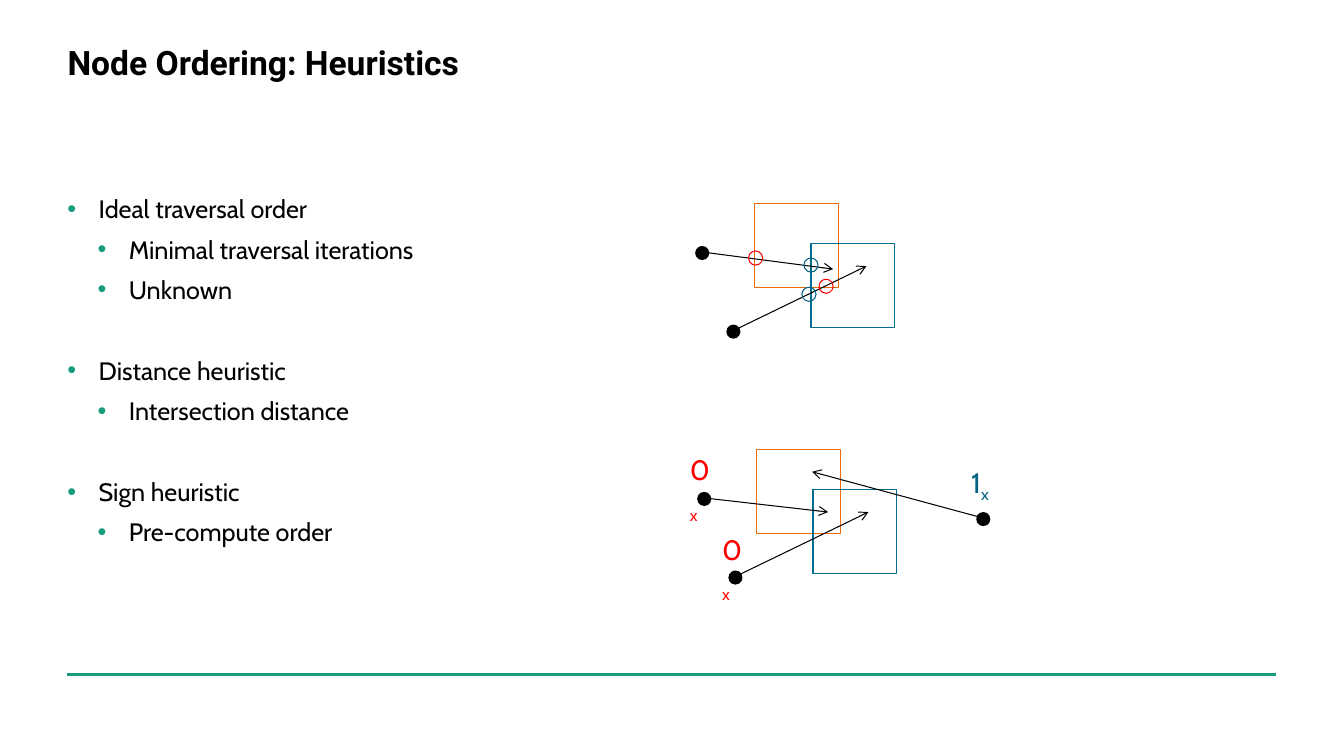
from dataclasses import dataclass

from lxml import etree
from pptx import Presentation
from pptx.dml.color import RGBColor
from pptx.enum.shapes import MSO_CONNECTOR, MSO_SHAPE
from pptx.oxml.ns import qn
from pptx.util import Inches, Pt

STRAIGHT = MSO_CONNECTOR.STRAIGHT
RECTANGLE = MSO_SHAPE.RECTANGLE
OVAL = MSO_SHAPE.OVAL


@dataclass(frozen=True)
class Theme:
    """Fonts, colours and type sizes of the slide."""
    heading_font: str = "Roboto"
    body_font: str = "Cabin"
    black: str = "000000"
    green: str = "179C7D"
    orange: str = "EB6A0A"
    blue: str = "006E92"
    dark_blue: str = "006384"
    red: str = "FF0000"
    title_size: float = 24
    body_size: float = 18
    label_size: float = 20
    thin: float = 0.75
    thick: float = 2.5


class SlideBuilder:
    """Draws styled elements on the current slide."""

    def __init__(self, slide, theme):
        self.slide = slide
        self.theme = theme

    def text_frame(self, left, top, width, height, margin=0.0):
        """Add an empty wrapping text box and return its frame."""
        box = self.slide.shapes.add_textbox(
            Inches(left), Inches(top), Inches(width), Inches(height))
        frame = box.text_frame
        frame.word_wrap = True
        frame.margin_left = frame.margin_right = Inches(margin)
        frame.margin_top = frame.margin_bottom = Inches(margin / 2)
        return frame

    def style(self, font, name, size, color, bold=False):
        """Apply typeface, size, colour and weight to a font."""
        font.name = name
        font.size = Pt(size)
        font.bold = bold
        font.color.rgb = RGBColor.from_string(color)

    def title(self, text):
        """Add the slide heading."""
        frame = self.text_frame(0.67, 0.42, 11.99, 0.4)
        frame.text = text
        self.style(frame.paragraphs[0].runs[0].font, self.theme.heading_font,
                   self.theme.title_size, self.theme.black, bold=True)

    def bullets(self, topics):
        """Add topics with their indented points in one text box."""
        frame = self.text_frame(0.67, 1.92, 5.8, 3.7)
        para = frame.paragraphs[0]
        for number, (topic, points) in enumerate(topics):
            for position, text in enumerate([topic, *points]):
                if number or position:
                    para = frame.add_paragraph()
                level = 1 if position else 0
                self.bullet(para, text, level)
                if number and not level:
                    para.space_before = Pt(29)

    def bullet(self, para, text, level):
        """Format one bulleted paragraph."""
        para.text = text
        para.level = level
        properties = para._p.get_or_add_pPr()
        properties.set("marL", str(Inches(0.31 + 0.3 * level)))
        properties.set("indent", str(Inches(-0.31)))
        color = etree.SubElement(properties, qn("a:buClr"))
        etree.SubElement(color, qn("a:srgbClr"), val=self.theme.green)
        etree.SubElement(properties, qn("a:buFont"), typeface="Arial")
        etree.SubElement(properties, qn("a:buChar"), char="•")
        para.space_after = Pt(7.2)
        self.style(para.runs[0].font, self.theme.body_font,
                   self.theme.body_size, self.theme.black)

    def shape(self, kind, left, top, size, line=None, fill=None):
        """Add a shape of equal sides, outlined or filled."""
        shape = self.slide.shapes.add_shape(
            kind, Inches(left), Inches(top), Inches(size), Inches(size))
        shape.shadow.inherit = False
        if fill:
            shape.fill.solid()
            shape.fill.fore_color.rgb = RGBColor.from_string(fill)
        else:
            shape.fill.background()
        if line:
            shape.line.color.rgb = RGBColor.from_string(line)
            shape.line.width = Pt(self.theme.thin)
        else:
            shape.line.fill.background()

    def line(self, start, end, color, width, arrow=False):
        """Add a straight line, with an arrowhead if asked."""
        points = [Inches(value) for value in (*start, *end)]
        line = self.slide.shapes.add_connector(STRAIGHT, *points)
        line.line.color.rgb = RGBColor.from_string(color)
        line.line.width = Pt(width)
        if arrow:
            etree.SubElement(line.line._get_or_add_ln(), qn("a:tailEnd"), type="arrow")
        etree.SubElement(line._element.spPr, qn("a:effectLst"))

    def ray(self, left, top, end):
        """Add an origin dot and the arrow leaving it."""
        self.shape(OVAL, left, top, 0.14, fill=self.theme.black)
        self.line((left + 0.07, top + 0.06), end, self.theme.black,
                  self.theme.thin, arrow=True)

    def scene(self, left, top, upper_end):
        """Add two overlapping squares and the two rays from the left."""
        self.shape(RECTANGLE, left, top, 0.83, line=self.theme.orange)
        self.shape(RECTANGLE, left + 0.56, top + 0.4, 0.83, line=self.theme.blue)
        self.ray(left - 0.28, top + 1.2, (left + 1.11, top + 0.62))
        self.ray(left - 0.59, top + 0.42, upper_end)

    def sign(self, digit, left, top, color):
        """Add a sign bit with its axis as subscript."""
        para = self.text_frame(left, top, 0.45, 0.44, margin=0.1).paragraphs[0]
        for text in (digit, "x"):
            span = para.add_run()
            span.text = text
            self.style(span.font, self.theme.body_font, self.theme.label_size, color)
        span._r.get_or_add_rPr().set("baseline", "-25000")


def main():
    """Build and save the slide."""
    theme = Theme()
    deck = Presentation()
    deck.slide_width, deck.slide_height = Inches(13.34), Inches(7.5)
    page = SlideBuilder(deck.slides.add_slide(deck.slide_layouts[6]), theme)

    page.line((0.67, 6.69), (12.67, 6.69), theme.green, theme.thick)
    page.title("Node Ordering: Heuristics")
    page.bullets([
        ("Ideal traversal order", ["Minimal traversal iterations", "Unknown"]),
        ("Distance heuristic", ["Intersection distance"]),
        ("Sign heuristic", ["Pre-compute order"]),
    ])

    page.scene(7.49, 2.02, upper_end=(8.27, 2.67))
    page.scene(7.51, 4.46, upper_end=(8.22, 5.08))
    page.ray(9.69, 5.08, (8.06, 4.68))

    for digit, left, top, color in [
        ("0", 6.75, 4.44, theme.red),
        ("1", 9.54, 4.57, theme.dark_blue),
        ("0", 7.07, 5.23, theme.red),
    ]:
        page.sign(digit, left, top, color)

    for left, top, color in [
        (7.43, 2.49, theme.red),
        (8.13, 2.77, theme.red),
        (7.96, 2.85, theme.dark_blue),
        (7.98, 2.56, theme.dark_blue),
    ]:
        page.shape(OVAL, left, top, 0.14, line=color)

    deck.save("out.pptx")


if __name__ == "__main__":
    main()
